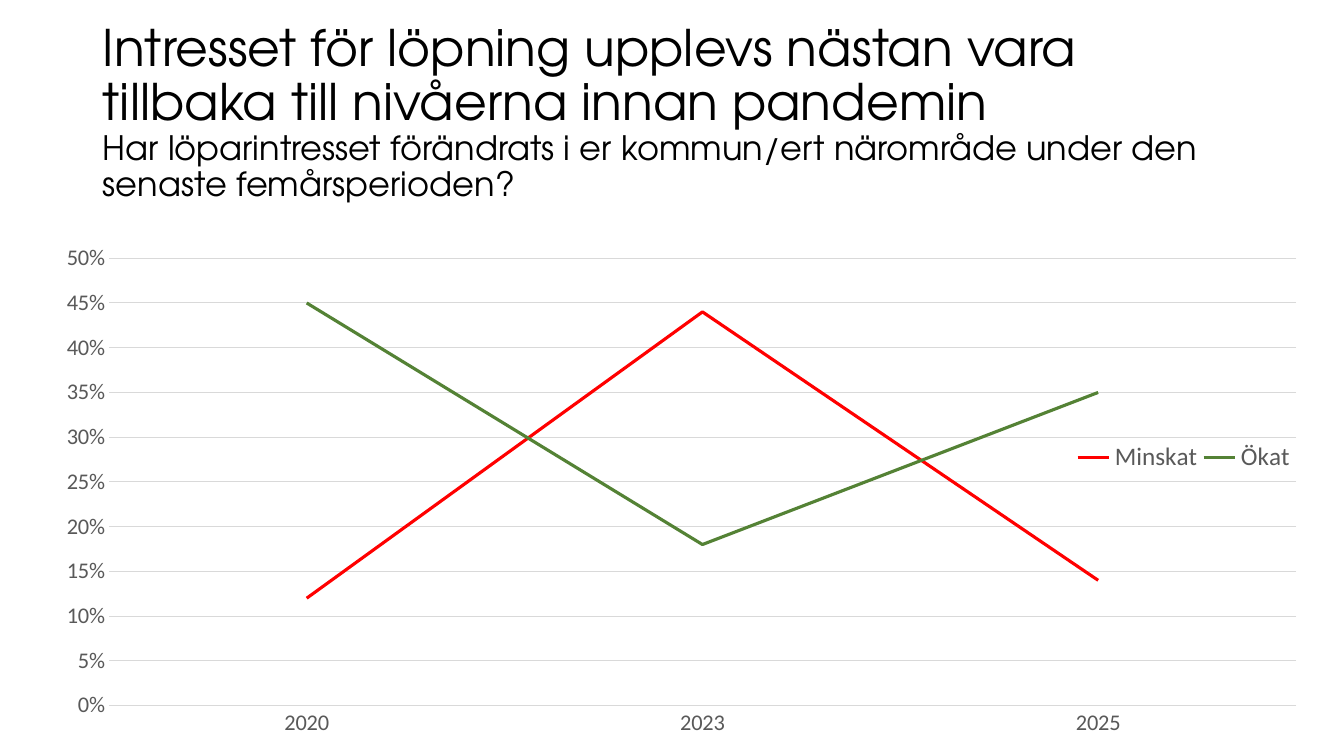
from lxml import etree
from pptx import Presentation
from pptx.chart.data import CategoryChartData
from pptx.dml.color import RGBColor
from pptx.enum import chart as charts, text
from pptx.oxml import ns
from pptx.util import Inches, Pt

# Content
HEADING = [
    ("Intresset för löpning upplevs nästan vara tillbaka till nivåerna innan pandemin", 36),
    ("Har löparintresset förändrats i er kommun/ert närområde under den senaste femårsperioden?", 24),
]
YEARS = ["2020", "2023", "2025"]
SERIES = [
    ("Minskat", [0.12, 0.44, 0.14], "decreased"),
    ("Ökat", [0.45, 0.18, 0.35], "increased"),
]
COLORS = {
    "title": "000000", "label": "595959", "grid": "D9D9D9",
    "decreased": "FF0000", "increased": "548235",
}
TITLE_FONT, CHART_FONT = "TeX Gyre Adventor", "Calibri"
PLOT_AREA = (0.05, 0.13, 0.95, 0.81)
LEGEND_AREA = (0.82, 0.46, 0.18, 0.06)


def color(name):
    return RGBColor.from_string(COLORS[name])


def style_font(font, name, size, shade):
    font.name, font.size = name, Pt(size)
    font.color.rgb = color(shade)


def style_line(line, shade, width):
    line.color.rgb = color(shade)
    line.width = Pt(width)


def set_layout(parent, index, area, inner=False):
    """Place a chart part by fractions of the chart's width and height."""
    for old in parent.findall(ns.qn("c:layout")):
        parent.remove(old)
    layout = etree.Element(ns.qn("c:layout"))
    parent.insert(index, layout)
    manual = etree.SubElement(layout, ns.qn("c:manualLayout"))
    settings = [("layoutTarget", "inner")] if inner else []
    settings += [("xMode", "edge"), ("yMode", "edge")]
    settings += zip("xywh", area)
    for tag, value in settings:
        etree.SubElement(manual, ns.qn(f"c:{tag}")).set("val", str(value))


deck = Presentation()
deck.slide_width, deck.slide_height = Inches(13.33), Inches(7.5)
page = deck.slides.add_slide(deck.slide_layouts[5])

# Title with question below
title = page.shapes.title
title.left, title.top = Inches(0.92), Inches(0.4)
title.width, title.height = Inches(11.5), Inches(1.45)
frame = title.text_frame
frame.word_wrap = True
frame.auto_size = text.MSO_AUTO_SIZE.NONE
frame.vertical_anchor = text.MSO_ANCHOR.MIDDLE
para = frame.paragraphs[0]
para.alignment = text.PP_ALIGN.LEFT
para.line_spacing = 0.9
for number, (words, size) in enumerate(HEADING):
    if number:
        para.add_line_break()
    span = para.add_run()
    span.text = words
    style_font(span.font, TITLE_FONT, size, "title")

# Line chart
data = CategoryChartData(number_format="0%")
data.categories = YEARS
for name, values, _ in SERIES:
    data.add_series(name, values)
chart = page.shapes.add_chart(
    charts.XL_CHART_TYPE.LINE, Inches(0.46), Inches(1.85),
    Inches(12.4), Inches(5.48), data).chart
chart.has_title = False
style_font(chart.font, CHART_FONT, 10, "title")
plot = chart.plots[0]
plot.vary_by_categories = False
for series, (_, _, shade) in zip(plot.series, SERIES):
    series.smooth = False
    series.marker.style = charts.XL_MARKER_STYLE.NONE
    style_line(series.format.line, shade, 2.25)
set_layout(chart.plots[0]._element.getparent(), 0, PLOT_AREA, inner=True)

# Axes
for axis in (chart.category_axis, chart.value_axis):
    axis.major_tick_mark = axis.minor_tick_mark = charts.XL_TICK_MARK.NONE
    style_font(axis.tick_labels.font, CHART_FONT, 16, "label")
style_line(chart.category_axis.format.line, "grid", 0.75)
scale = chart.value_axis
scale.minimum_scale, scale.maximum_scale, scale.major_unit = 0, 0.5, 0.05
scale.tick_labels.number_format = "0%"
scale.tick_labels.number_format_is_linked = False
scale.format.line.fill.background()
scale.has_major_gridlines = True
style_line(scale.major_gridlines.format.line, "grid", 0.75)

# Legend
chart.has_legend = True
legend = chart.legend
legend.position = charts.XL_LEGEND_POSITION.BOTTOM
legend.include_in_layout = False
style_font(legend.font, CHART_FONT, 18, "label")
set_layout(legend._element, 1, LEGEND_AREA)

deck.save("out.pptx")
